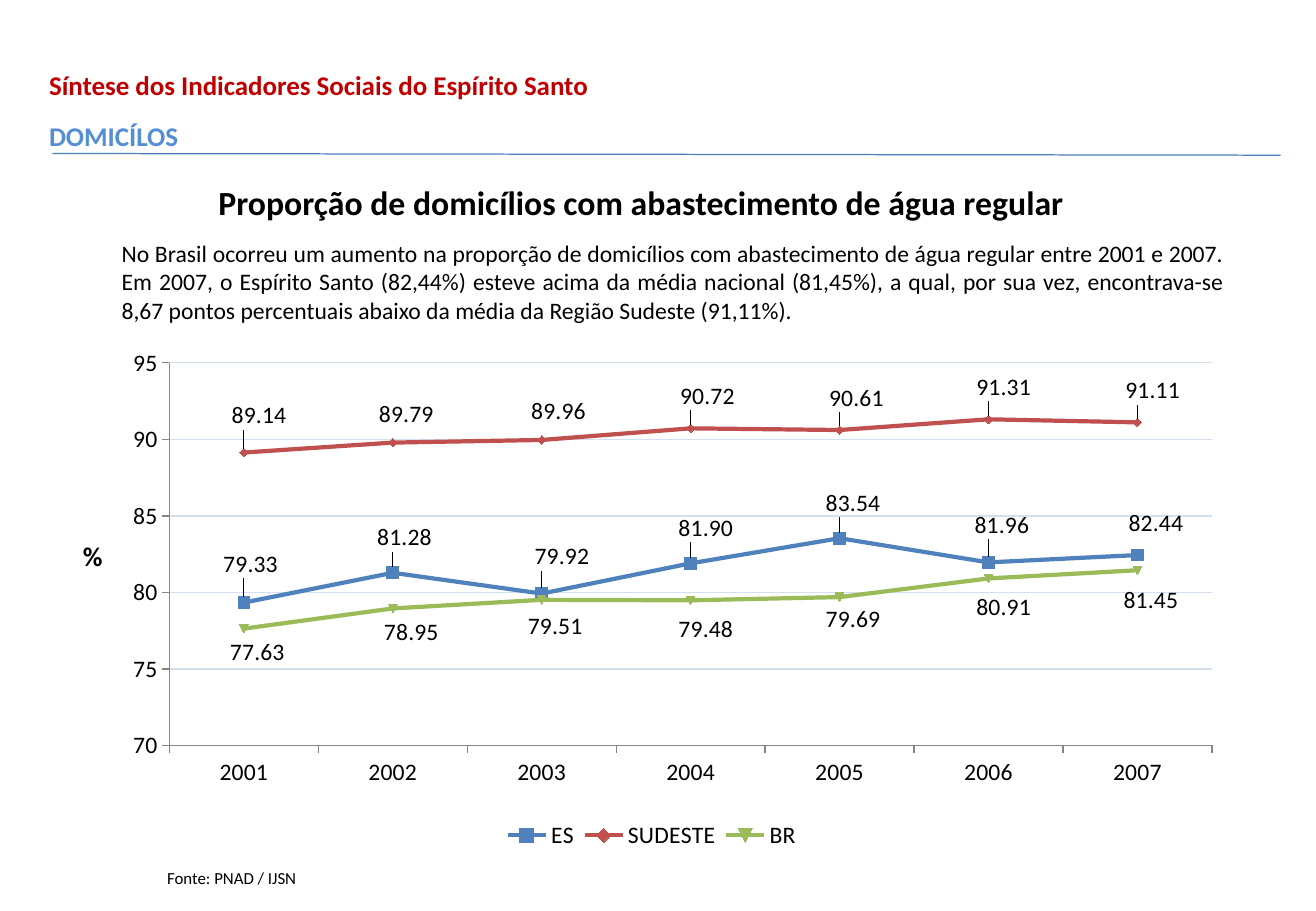
"""Build a slide with a line chart of regular water supply by region."""
from lxml import etree
from pptx import Presentation
from pptx.chart.data import CategoryChartData
from pptx.dml.color import RGBColor
from pptx.enum.chart import (XL_CHART_TYPE, XL_LABEL_POSITION,
                             XL_LEGEND_POSITION, XL_MARKER_STYLE, XL_TICK_MARK)
from pptx.enum.shapes import MSO_CONNECTOR
from pptx.enum.text import MSO_ANCHOR, MSO_AUTO_SIZE, PP_ALIGN
from pptx.oxml import parse_xml
from pptx.oxml.ns import nsdecls, qn
from pptx.util import Pt

LEFT, MID, JUST = PP_ALIGN.LEFT, PP_ALIGN.CENTER, PP_ALIGN.JUSTIFY
ABOVE, BELOW = XL_LABEL_POSITION.ABOVE, XL_LABEL_POSITION.BELOW
LINES, BOTTOM = XL_CHART_TYPE.LINE_MARKERS, XL_LEGEND_POSITION.BOTTOM
SQUARE, OUTSIDE = XL_MARKER_STYLE.SQUARE, XL_TICK_MARK.OUTSIDE
TOP, FIXED = MSO_ANCHOR.TOP, MSO_AUTO_SIZE.NONE
STRAIGHT = MSO_CONNECTOR.STRAIGHT
WIDE, HIGH = 679, 337


def ink(code):
    return RGBColor.from_string(code)


def place(node, spot, vals):
    for old in node.findall(qn("c:layout")):
        node.remove(old)
    tags = "".join(f'<c:{key} val="{val}"/>' for key, val in vals.items())
    node.insert(spot, parse_xml(
        f'<c:layout {nsdecls("c")}><c:manualLayout>{tags}'
        '</c:manualLayout></c:layout>'))


deck = Presentation()
deck.slide_width, deck.slide_height = Pt(780), Pt(540)
slide = deck.slides.add_slide(deck.slide_layouts[5])
shapes = slide.shapes

rows = [
    ("ES", "4F81BD", 7, ABOVE,
     [79.33, 81.28, 79.92, 81.90, 83.54, 81.96, 82.44],
     [(4, -8), (7, -6), (12, -7), (9, -6), (8, -6), (8, -7), (11, -4)]),
    ("SUDESTE", "C0504D", 5, ABOVE,
     [89.14, 89.79, 89.96, 90.72, 90.61, 91.31, 91.11],
     [(9, -8), (8, -3), (10, -3), (10, -5), (10, -5), (9, -5), (9, -5)]),
    ("BR", "9BBB59", 5, BELOW,
     [77.63, 78.95, 79.51, 79.48, 79.69, 80.91, 81.45],
     [(8, 0), (11, 0), (8, 2), (9, 3), (8, -1), (9, 3), (8, 4)]),
]
data = CategoryChartData(number_format="0.00")
data.categories = [str(year) for year in range(2001, 2008)]
for name, tint, size, side, vals, moves in rows:
    data.add_series(name, vals)
chart = shapes.add_chart(LINES, Pt(57), Pt(175), Pt(WIDE), Pt(HIGH), data).chart
chart.has_title = False
chart.font.name, chart.font.size = "Calibri", Pt(14)
chart.font.color.rgb = ink("000000")
plot = chart.plots[0]
plot.vary_by_categories = False

for line, (name, tint, size, side, vals, moves) in zip(plot.series, rows):
    line.smooth = False
    line.format.line.color.rgb = ink(tint)
    line.format.line.width = Pt(2.5)
    line.marker.size = size
    if name == "ES":
        line.marker.style = SQUARE
    look = line.marker.format
    look.fill.solid()
    look.fill.fore_color.rgb = look.line.color.rgb = ink(tint)
    tags = line.data_labels
    tags.show_value, tags.position = True, side
    tags.number_format, tags.number_format_is_linked = "0.00", False
    tags.font.size = Pt(14)
    for i, (right, down) in enumerate(moves):
        tag = line.points[i].data_label
        tag.position, tag.font.size = side, Pt(14)
        node = line._element.findall(".//" + qn("c:dLbl"))[i]
        place(node, 1, {"x": round(right / WIDE, 4), "y": round(down / HIGH, 4)})

scale = chart.value_axis
form = {"minimum_scale": 70, "maximum_scale": 95, "major_unit": 5}
for key, val in form.items():
    setattr(scale, key, val)
scale.tick_labels.number_format = "0"
scale.tick_labels.number_format_is_linked = False
grid = scale.major_gridlines.format.line
grid.color.rgb, grid.width = ink("D3E0EF"), Pt(0.75)
for axis in (scale, chart.category_axis):
    axis.major_tick_mark = OUTSIDE
    axis.tick_labels.font.size = Pt(14)
    axis.format.line.color.rgb = ink("868686")

chart.has_legend = True
chart.legend.position, chart.legend.include_in_layout = BOTTOM, False
chart.legend.font.size = Pt(14)
root = plot.series[0]._element.getroottree().getroot()
edge = {"xMode": "edge", "yMode": "edge"}
place(root.find(".//" + qn("c:plotArea")), 0,
      {"layoutTarget": "inner", **edge, "x": 0.064, "y": 0.119, "w": 0.91, "h": 0.673})
place(root.find(".//" + qn("c:legend")), 1,
      {**edge, "x": 0.35, "y": 0.915, "w": 0.27, "h": 0.07})

title = "Proporção de domicílios com abastecimento de água regular"
story = (
    "No Brasil ocorreu um aumento na proporção de domicílios com abastecimento "
    "de água regular entre 2001 e 2007. Em 2007, o Espírito Santo (82,44%) esteve "
    "acima da média nacional (81,45%), a qual, por sua vez, encontrava-se 8,67 "
    "pontos percentuais abaixo da média da Região Sudeste (91,11%).")
head = "Síntese dos Indicadores Sociais do Espírito Santo"
texts = [
    ((65, 138, 668, 58), JUST, 14, False, [(story, "000000")]),
    ((98, 104, 564, 31), MID, 20, True, [(title, "000000")]),
    ((92, 511, 92, 20), LEFT, 10, False, [("Fonte: PNAD / IJSN", "000000")]),
    ((22, 37, 758, 81), LEFT, 16, True,
     [(head, "C00000"), ("DOMICÍLOS", "558ED5")]),
    ((42, 316, 26, 27), LEFT, 16, True, [("%", "000000")]),
]
for spot, align, size, bold, parts in texts:
    spot = [Pt(n) for n in spot]
    if parts[0][0] == title:
        box = shapes.title
        box.left, box.top, box.width, box.height = spot
    else:
        box = shapes.add_textbox(*spot)
    frame = box.text_frame
    form = {"word_wrap": size > 10, "auto_size": FIXED, "vertical_anchor": TOP}
    for key, val in form.items():
        setattr(frame, key, val)
    for i, (words, tint) in enumerate(parts):
        para = frame.add_paragraph() if i else frame.paragraphs[0]
        para.text, para.alignment = words, align
        para.space_before = Pt(11 * i)
        form = {"name": "Calibri", "size": Pt(size), "bold": bold}
        for key, val in form.items():
            setattr(para.runs[0].font, key, val)
        para.runs[0].font.color.rgb = ink(tint)

rule = shapes.add_connector(STRAIGHT, Pt(31), Pt(91), Pt(759), Pt(92))
rule.line.color.rgb, rule.line.width = ink("4B7EBC"), Pt(0.75)
etree.SubElement(rule._element.spPr, qn("a:effectLst"))

deck.save("out.pptx")
